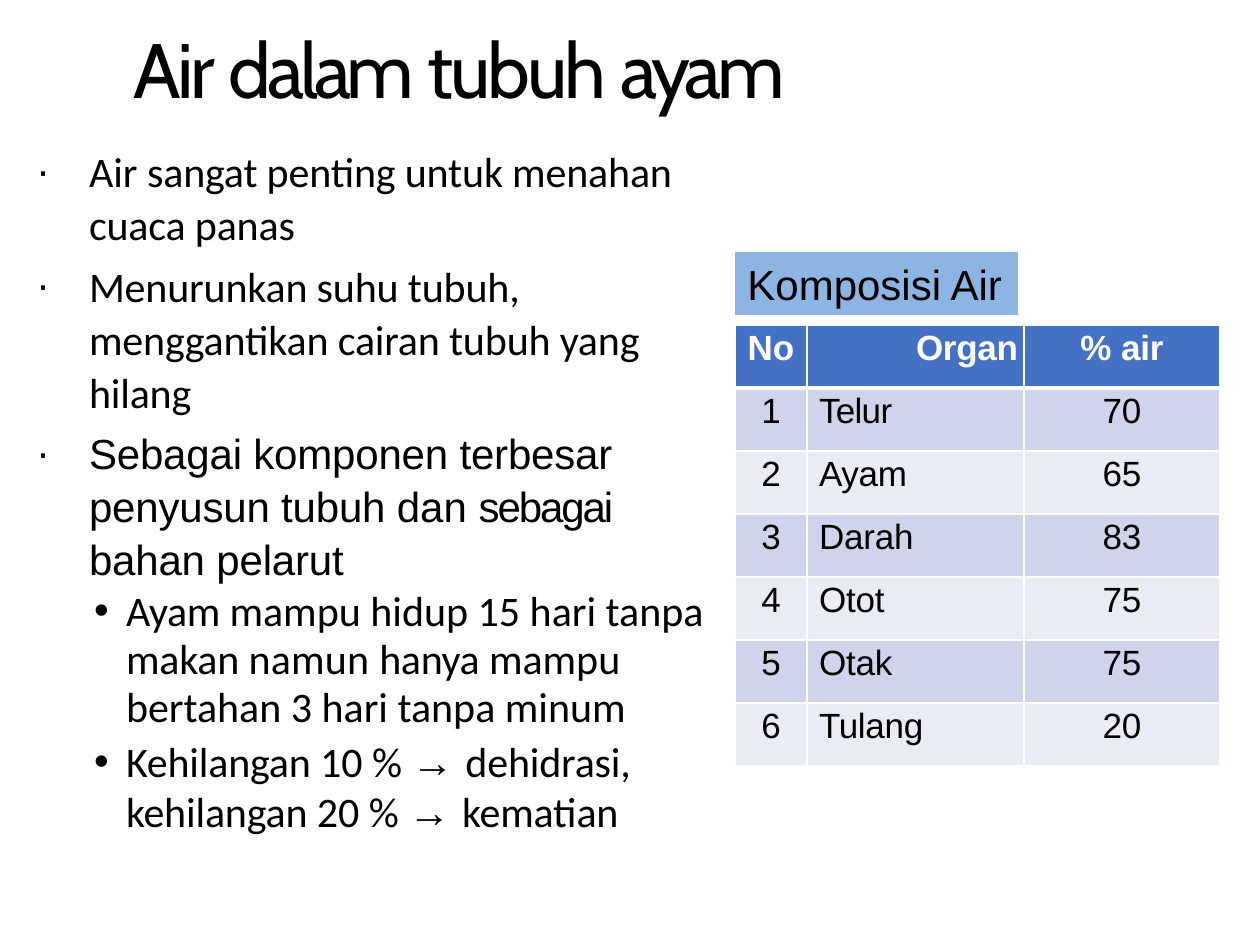
from lxml import etree
from pptx import Presentation
from pptx.dml.color import RGBColor
from pptx.enum import shapes, text
from pptx.oxml.ns import qn
from pptx.util import Emu, Pt

BLACK, WHITE = "000000", "FFFFFF"
HEADER_FILL, BANDS = "4471C4", ("CFD4EA", "E9EBF5")

TITLE = [("Air ", "Cabin", -2.1), ("dalam ", "Cabin", -2.4),
         ("tubuh ", "Cabin", -1.8), ("ayam", "Cabin", -2.7)]
MAIN = {"char": "·", "left": 54, "hang": 53, "before": 4.8, "line": 30.3}
SUB = {"char": "•", "left": 91, "hang": 32, "before": 1.9, "line": 27.4}
LAST = {**SUB, "before": 2.4, "line": None}
POINTS = [
    (MAIN, [("Air ", "Calibri", 0),
            ("sangat penting untuk menahan cuaca panas", "Calibri", -0.1)]),
    (MAIN, [("Menurunkan suhu tubuh, menggantikan cairan tubuh yang hilang",
             "Calibri", -0.1)]),
    (MAIN, [("Sebagai komponen terbesar penyusun tubuh ", "Arial", -0.1),
            ("dan ", "Arial", 0), ("sebagai ", "Arial", -1.2),
            ("bahan pelarut", "Arial", -0.1)]),
    (SUB, [("Ayam ", "Calibri", -0.2), ("mampu hidup 15 hari tanpa ", "Calibri", 0),
           ("makan ", "Calibri", -0.1), ("namun ", "Calibri", 0.1),
           ("hanya ", "Calibri", -0.2),
           ("mampu bertahan 3 hari tanpa minum", "Calibri", 0)]),
    (LAST, [("Kehilangan ", "Calibri", -0.1), ("10 % ", "Calibri", 0),
            ("→ ", "Arial", 0), ("dehidrasi, kehilangan ", "Calibri", -0.1),
            ("20 % ", "Calibri", 0), ("→ ", "Arial", 0),
            ("kematian", "Calibri", -0.1)]),
]
HEADER = [("No", 0), ("Organ", -0.2), ("% air", -0.1)]
ORGANS = [("Telur", -0.4, "70"), ("Ayam", -0.2, "65"), ("Darah", -0.1, "83"),
          ("Otot", -0.1, "75"), ("Otak", -0.1, "75"), ("Tulang", -0.2, "20")]
LABEL = [("Komposisi Air", "Arial", 0)]
COLS, ROW_H = (72, 217, 196), 63
TABLE_X, TABLE_Y = 735, 325


def px(n):
    return Emu(round(n * 914400 / 126))


def rgb(value):
    return RGBColor.from_string(value)


def set_all(obj, values):
    for name, value in values.items():
        setattr(obj, name, value)


def add_runs(p, runs, size, color=BLACK, bold=False):
    for words, font, spacing in runs:
        r = p.add_run()
        r.text = words
        set_all(r.font, {"name": font, "size": Pt(size), "bold": bold})
        r.font.color.rgb = rgb(color)
        if spacing:
            r.font._element.set("spc", str(round(spacing * 100)))


def add_box(s, x, y, w, h, top):
    tf = s.shapes.add_textbox(px(x), px(y), px(w), px(h)).text_frame
    set_all(tf, {"word_wrap": True, "margin_left": 0, "margin_right": 0,
                 "margin_top": px(top), "margin_bottom": 0,
                 "auto_size": text.MSO_AUTO_SIZE.SHAPE_TO_FIT_TEXT})
    return tf


def format_point(p, style):
    p.space_before = Pt(style["before"])
    if style["line"]:
        p.line_spacing = Pt(style["line"])
    pPr = p._p.get_or_add_pPr()
    pPr.set("marL", str(px(style["left"])))
    pPr.set("indent", str(-px(style["hang"])))
    etree.SubElement(pPr, qn("a:buFont"), typeface="Arial")
    etree.SubElement(pPr, qn("a:buChar"), char=style["char"])


def set_borders(cell, widths):
    tcPr = cell._tc.get_or_add_tcPr()
    for i, (side, width) in enumerate(widths.items()):
        ln = etree.Element(qn("a:ln" + side), w=str(Pt(width)))
        fill = etree.SubElement(ln, qn("a:solidFill"))
        etree.SubElement(fill, qn("a:srgbClr"), val=WHITE)
        tcPr.insert(i, ln)


def add_organ_table(s):
    rows = [HEADER] + [[(str(i), 0), (organ, spacing), (share, 0)]
                       for i, (organ, spacing, share) in enumerate(ORGANS, 1)]
    table = s.shapes.add_table(len(rows), len(COLS), px(TABLE_X), px(TABLE_Y),
                               px(sum(COLS)), px(ROW_H * len(rows))).table
    for column, width in zip(table.columns, COLS):
        column.width = px(width)
    for i, row in enumerate(rows):
        table.rows[i].height = px(ROW_H)
        for j, (words, spacing) in enumerate(row):
            cell = table.cell(i, j)
            set_all(cell, {"margin_left": 0, "margin_right": 0,
                           "margin_top": px(4), "margin_bottom": 0})
            cell.fill.solid()
            cell.fill.fore_color.rgb = rgb(BANDS[(i - 1) % 2] if i else HEADER_FILL)
            set_borders(cell, {"L": 1, "R": 1, "T": 3 if i == 1 else 1,
                               "B": 1 if i else 3})
            p = cell.text_frame.paragraphs[0]
            named = i > 0 and j == 1
            set_all(p, {"space_before": Pt(2.3),
                        "alignment": text.PP_ALIGN.LEFT if named else text.PP_ALIGN.CENTER})
            if j == 1:
                p._p.get_or_add_pPr().set("marL", str(px(12 if i else 103)))
            add_runs(p, [(words, "Arial", spacing)], 20, BLACK if i else WHITE, i == 0)


def add_label(s):
    sp = s.shapes.add_shape(shapes.MSO_SHAPE.RECTANGLE, px(TABLE_X), px(252),
                            px(283), px(63))
    sp.shadow.inherit = False
    sp.fill.solid()
    sp.fill.fore_color.rgb = rgb("8EB4E3")
    sp.line.fill.background()
    tf = sp.text_frame
    set_all(tf, {"word_wrap": True, "vertical_anchor": text.MSO_ANCHOR.TOP,
                 "auto_size": text.MSO_AUTO_SIZE.SHAPE_TO_FIT_TEXT})
    tf.paragraphs[0].alignment = text.PP_ALIGN.LEFT
    add_runs(tf.paragraphs[0], LABEL, 24)


def main():
    prs = Presentation()
    set_all(prs, {"slide_width": px(1260), "slide_height": px(945)})
    s = prs.slides.add_slide(prs.slide_layouts[6])

    p = add_box(s, 134, 21, 683, 96, 1).paragraphs[0]
    p.space_before = Pt(0.9)
    add_runs(p, TITLE, 44)

    tf = add_box(s, 35, 134, 699, 859, 9)
    for i, (style, runs) in enumerate(POINTS):
        p = tf.add_paragraph() if i else tf.paragraphs[0]
        format_point(p, style)
        add_runs(p, runs, 24)

    add_organ_table(s)
    add_label(s)
    prs.save("out.pptx")


if __name__ == "__main__":
    main()
